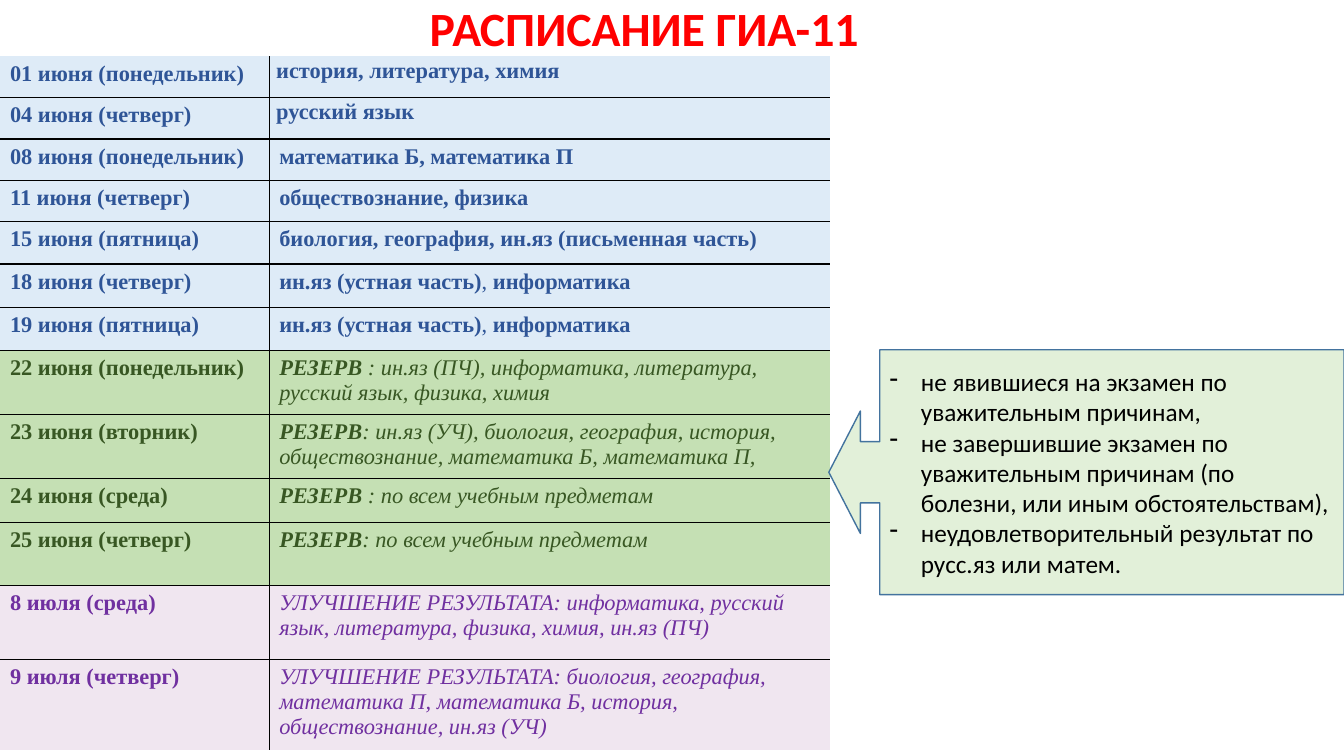
from lxml import etree
from pptx import Presentation
from pptx.dml.color import RGBColor
from pptx.enum.shapes import MSO_SHAPE
from pptx.enum.text import MSO_ANCHOR, PP_ALIGN
from pptx.oxml.ns import qn
from pptx.util import Inches, Pt

CALLOUT_ARROW = MSO_SHAPE.LEFT_ARROW_CALLOUT
MIDDLE = MSO_ANCHOR.MIDDLE
CENTER, LEFT = PP_ALIGN.CENTER, PP_ALIGN.LEFT

RED = RGBColor(0xFF, 0x00, 0x00)
BLACK = RGBColor(0x00, 0x00, 0x00)
BLUE = RGBColor(0x2F, 0x55, 0x97)
PALE_BLUE = RGBColor(0xDE, 0xEB, 0xF7)
GREEN = RGBColor(0x38, 0x57, 0x23)
PALE_GREEN = RGBColor(0xC5, 0xE0, 0xB4)
PURPLE = RGBColor(0x70, 0x30, 0xA0)
PALE_PURPLE = RGBColor(0xF0, 0xE6, 0xF0)
CALLOUT_FILL = RGBColor(0xE2, 0xF0, 0xD9)
CALLOUT_LINE = RGBColor(0x43, 0x73, 0x9E)


def add_text(paragraph, text, font="Times New Roman", size=16, color=BLACK,
             bold=False, italic=False):
    run = paragraph.add_run()
    run.text = text
    run.font.name = font
    run.font.size = Pt(size)
    run.font.color.rgb = color
    run.font.bold = bold
    run.font.italic = italic


def add_border(cell, side, visible):
    line = etree.SubElement(cell._tc.get_or_add_tcPr(), qn("a:" + side), w=str(Pt(1)))
    if visible:
        fill = etree.SubElement(line, qn("a:solidFill"))
        etree.SubElement(fill, qn("a:srgbClr"), val=str(BLACK))
    else:
        etree.SubElement(line, qn("a:noFill"))


prs = Presentation()
prs.slide_width, prs.slide_height = Inches(13.33), Inches(7.5)
slide = prs.slides.add_slide(prs.slide_layouts[6])

# Title
title = slide.shapes.add_textbox(Inches(4.13), Inches(0.04), Inches(4.52), Inches(0.61))
title.text_frame.word_wrap = True
title.text_frame.vertical_anchor = MIDDLE
heading = title.text_frame.paragraphs[0]
heading.alignment = CENTER
heading.line_spacing = 0.7
add_text(heading, "РАСПИСАНИЕ ГИА-11", font="Calibri", size=34.1, color=RED, bold=True)

# Exam periods: text colour, fill, rows of (height, date, bold lead, rest, bold tail)
oral = ("ин.яз (устная часть)", ", ", "информатика")
improve = "УЛУЧШЕНИЕ РЕЗУЛЬТАТА: "
main_days = [
    (0.41, "01 июня (понедельник)", "история, литература, химия"),
    (0.41, "04 июня (четверг)", "русский язык"),
    (0.41, "08 июня (понедельник)", "математика Б, математика П"),
    (0.41, "11 июня (четверг)", "обществознание, физика"),
    (0.42, "15 июня (пятница)", "биология, география, ин.яз (письменная часть)"),
    (0.43, "18 июня (четверг)", *oral),
    (0.43, "19 июня (пятница)", *oral),
]
reserve_days = [
    (0.62, "22 июня (понедельник)", "РЕЗЕРВ",
     " : ин.яз (ПЧ), информатика, литература, русский язык, физика, химия"),
    (0.63, "23 июня (вторник)", "РЕЗЕРВ",
     ": ин.яз (УЧ), биология, география, история, обществознание, "
     "математика Б, математика П,"),
    (0.44, "24 июня (среда)", "РЕЗЕРВ", " : по всем учебным предметам"),
    (0.62, "25 июня (четверг)", "РЕЗЕРВ", ": по всем учебным предметам"),
]
improvement_days = [
    (0.74, "8 июля (среда)", "",
     improve + "информатика, русский язык, литература, физика, химия, ин.яз (ПЧ)"),
    (0.89, "9 июля (четверг)", "",
     improve + "биология, география, математика П, математика Б, история, "
     "обществознание, ин.яз (УЧ)"),
]
periods = [
    (BLUE, PALE_BLUE, False, main_days),
    (GREEN, PALE_GREEN, True, reserve_days),
    (PURPLE, PALE_PURPLE, True, improvement_days),
]
days = [(color, fill, italic, *day)
        for color, fill, italic, rows in periods for day in rows]

# Schedule table
schedule = slide.shapes.add_table(len(days), 2, Inches(0), Inches(0.56),
                                  Inches(8.23), Inches(6.86)).table
schedule.first_row = schedule.horz_banding = False
schedule.columns[0].width = Inches(2.67)
schedule.columns[1].width = Inches(5.56)

for row, (color, fill, italic, height, date, *subjects) in enumerate(days):
    schedule.rows[row].height = Inches(height)
    date_cell, subject_cell = schedule.cell(row, 0), schedule.cell(row, 1)
    for column, cell in enumerate((date_cell, subject_cell)):
        add_border(cell, "lnL", column == 1)
        add_border(cell, "lnR", column == 0)
        add_border(cell, "lnT", row > 0)
        add_border(cell, "lnB", row < len(days) - 1)
        cell.fill.solid()
        cell.fill.fore_color.rgb = fill
    add_text(date_cell.text_frame.paragraphs[0], date, color=color, bold=True)
    subject_line = subject_cell.text_frame.paragraphs[0]
    for part, text in enumerate(subjects):
        if text:
            add_text(subject_line, text, color=color, bold=part != 1, italic=italic)
    if row < 2:
        subject_cell.margin_left = subject_cell.margin_right = Inches(0.07)
        subject_cell.margin_top = subject_cell.margin_bottom = 0
        subject_line.line_spacing = 1.07

# Callout: who sits the reserve days
callout = slide.shapes.add_shape(CALLOUT_ARROW, Inches(8.22), Inches(3.47),
                                 Inches(5.11), Inches(2.43))
for index, value in enumerate((0.25, 0.25, 0.129, 0.901)):
    callout.adjustments[index] = value
callout.shadow.inherit = False
callout.fill.solid()
callout.fill.fore_color.rgb = CALLOUT_FILL
callout.line.color.rgb = CALLOUT_LINE
callout.line.width = Pt(1)
reasons = callout.text_frame
reasons.word_wrap = True
reasons.vertical_anchor = MIDDLE
for index, reason in enumerate((
    "не явившиеся на экзамен по уважительным причинам,",
    "не завершившие экзамен по уважительным причинам "
    "(по болезни, или иным обстоятельствам),",
    "неудовлетворительный результат по русс.яз или матем.",
)):
    paragraph = reasons.add_paragraph() if index else reasons.paragraphs[0]
    paragraph.alignment = LEFT
    properties = paragraph._p.get_or_add_pPr()
    properties.set("marL", str(Inches(0.31)))
    properties.set("indent", str(-Inches(0.31)))
    etree.SubElement(properties, qn("a:buChar"), char="-")
    add_text(paragraph, reason, font="Calibri", size=18)

prs.save("out.pptx")
